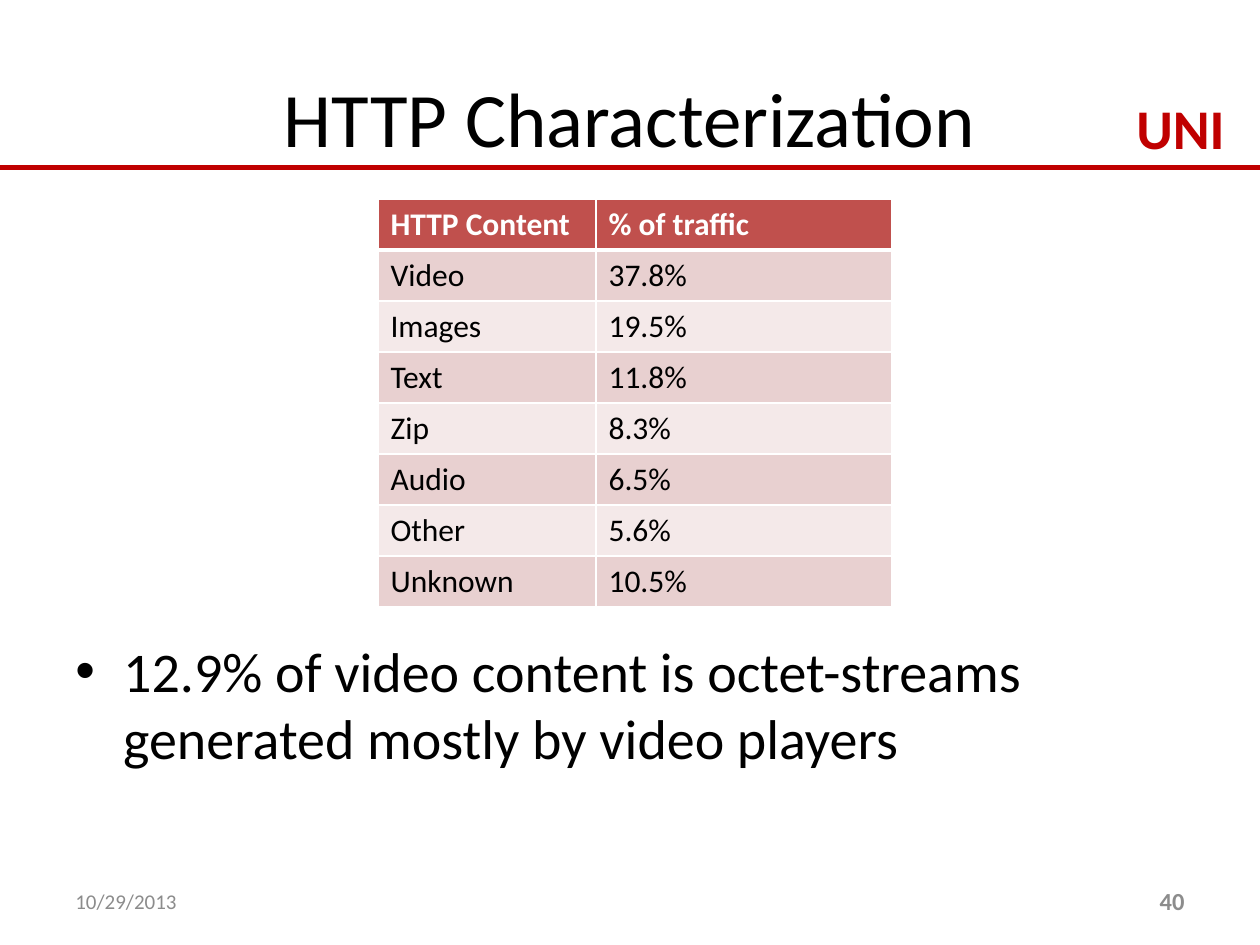
from lxml.etree import SubElement
from pptx import Presentation
from pptx.dml.color import RGBColor
from pptx.enum.shapes import MSO_CONNECTOR
from pptx.enum.text import MSO_ANCHOR as Anchor, PP_ALIGN as Align
from pptx.oxml.ns import qn
from pptx.util import Inches, Pt

TITLE = "HTTP Characterization"
BRAND = "UNI"
BULLET = "12.9% of video content is octet-streams generated mostly by video players"
DATE = "10/29/2013"
PAGE = "40"
TRAFFIC = [
    ("HTTP Content", "% of traffic"),
    ("Video", "37.8%"),
    ("Images", "19.5%"),
    ("Text", "11.8%"),
    ("Zip", "8.3%"),
    ("Audio", "6.5%"),
    ("Other", "5.6%"),
    ("Unknown", "10.5%"),
]
COLUMN_WIDTHS = (1.73, 2.35)
ROW_HEIGHT = 0.405
RED, GRAY, BLACK, WHITE = "C00000", "8C8C8C", "000000", "FFFFFF"
HEADER_FILL, BANDS = "C0504D", ("E8D0D0", "F4E9E9")


def color(value):
    return RGBColor.from_string(value)


def write(frame, text, size=18, fill=BLACK, bold=False, align=Align.LEFT):
    paragraph = frame.paragraphs[0]
    paragraph.alignment = align
    run = paragraph.add_run()
    run.text = text
    run.font.name = "Calibri"
    run.font.size = Pt(size)
    run.font.bold = bold
    run.font.color.rgb = color(fill)
    return paragraph


def add_text(slide, text, box, anchor=Anchor.TOP, wrap=True, **style):
    frame = slide.shapes.add_textbox(*map(Inches, box)).text_frame
    frame.word_wrap = wrap
    frame.vertical_anchor = anchor
    return write(frame, text, **style)


def add_bullet(paragraph, indent):
    paragraph.space_before = Pt(6.4)
    properties = paragraph._p.get_or_add_pPr()
    properties.set("marL", str(Inches(indent)))
    properties.set("indent", str(-Inches(indent)))
    SubElement(properties, qn("a:buFont"), typeface="Arial")
    SubElement(properties, qn("a:buChar"), char="•")


def add_borders(cell, widths):
    properties = cell._tc.get_or_add_tcPr()
    for side, width in widths.items():
        line = SubElement(properties, qn(f"a:ln{side}"), w=str(Pt(width)))
        fill = SubElement(line, qn("a:solidFill"))
        SubElement(fill, qn("a:srgbClr"), val=WHITE)


def add_traffic_table(slide, left, top):
    size = (sum(COLUMN_WIDTHS), ROW_HEIGHT * len(TRAFFIC))
    shape = slide.shapes.add_table(
        len(TRAFFIC), len(COLUMN_WIDTHS), *map(Inches, (left, top, *size)))
    table = shape.table
    for column, width in zip(table.columns, COLUMN_WIDTHS):
        column.width = Inches(width)
    for row, values in enumerate(TRAFFIC):
        table.rows[row].height = Inches(ROW_HEIGHT)
        header = row == 0
        for column, value in enumerate(values):
            cell = table.cell(row, column)
            add_borders(cell, {"L": 1, "R": 1, "T": 3 if row == 1 else 1,
                               "B": 3 if header else 1})
            cell.fill.solid()
            cell.fill.fore_color.rgb = color(
                HEADER_FILL if header else BANDS[(row - 1) % 2])
            write(cell.text_frame, value, bold=header,
                  fill=WHITE if header else BLACK)


def add_rule(slide, top, width):
    rule = slide.shapes.add_connector(
        MSO_CONNECTOR.STRAIGHT, 0, Inches(top), Inches(width), Inches(top))
    rule.line.color.rgb = color(RED)
    rule.line.width = Pt(3.25)
    SubElement(rule._element.spPr, qn("a:effectLst"))


def main():
    presentation = Presentation()
    presentation.slide_width = Inches(10)
    presentation.slide_height = Inches(7.5)
    slide = presentation.slides.add_slide(presentation.slide_layouts[6])

    add_text(slide, BRAND, (8.92, 0.69, 0.97, 0.64), wrap=False,
             size=32, fill=RED, bold=True)
    add_rule(slide, 1.33, 10)
    add_text(slide, TITLE, (0.5, 0.3, 9, 1.25), Anchor.MIDDLE,
             size=44, align=Align.CENTER)
    add_bullet(add_text(slide, BULLET, (0.5, 5, 9, 1.7), size=32), 0.38)
    add_text(slide, DATE, (0.5, 6.95, 2.33, 0.4), Anchor.MIDDLE,
             size=12, fill=GRAY)
    add_text(slide, PAGE, (7.17, 6.95, 2.33, 0.4), Anchor.MIDDLE,
             size=14, fill=GRAY, bold=True, align=Align.RIGHT)
    add_traffic_table(slide, 3, 1.58)
    presentation.save("out.pptx")


if __name__ == "__main__":
    main()
